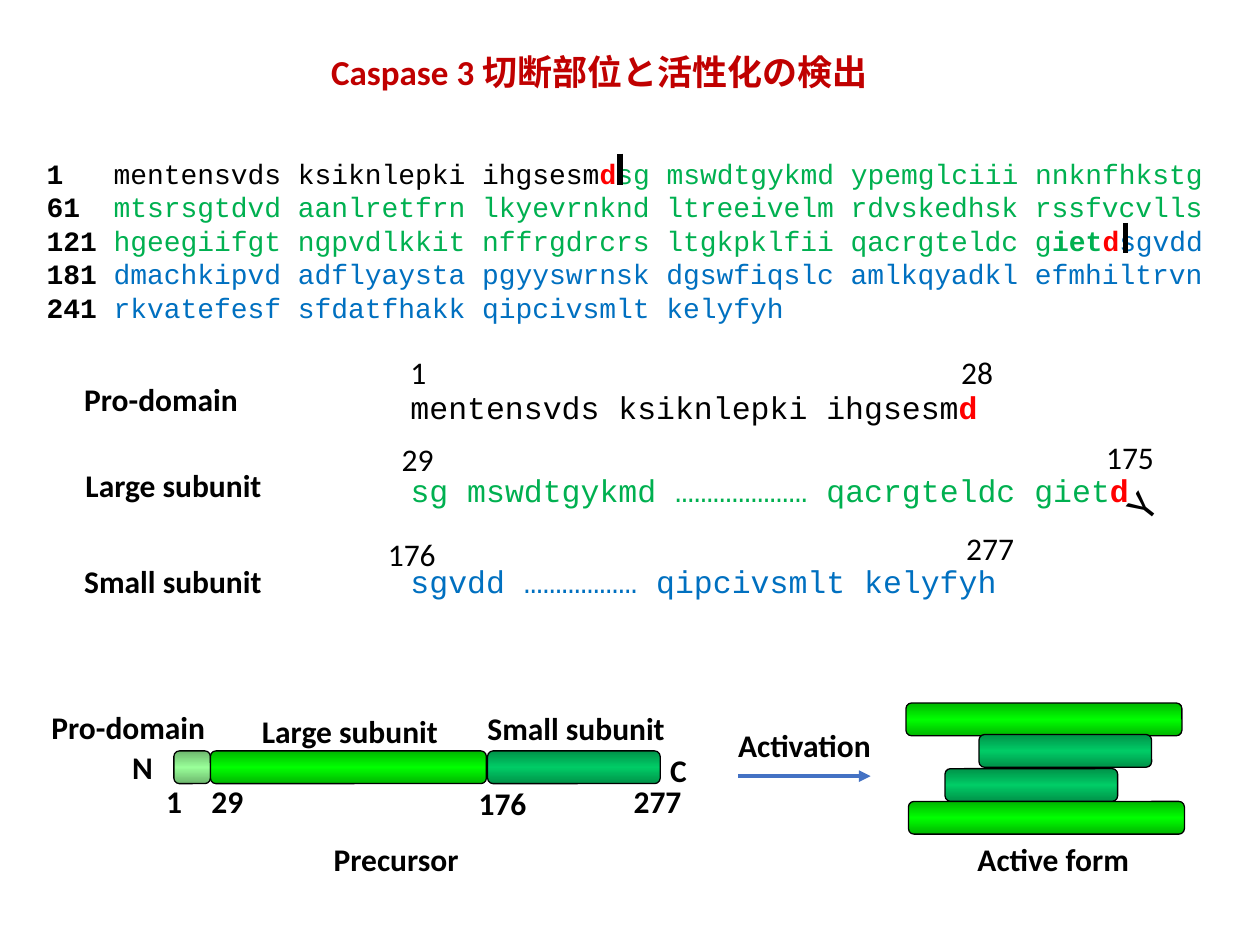
import copy

import pptx
import pptx.dml.color
import pptx.enum.shapes
import pptx.enum.text
import pptx.oxml
import pptx.oxml.ns
import pptx.util
from pptx.util import Inches

COLORS = {
    "black": "000000", "white": "FFFFFF", "title": "C00000", "cut": "FF0000",
    "large": "00B050", "small": "0070C0", "arrow": "4472C4",
}
GRADIENTS = {
    "pro": ("6DB66D", "99FF99"),
    "large": ("00B600", "00FF00"),
    "small": ("009249", "00CC66"),
}

presentation = pptx.Presentation()
presentation.slide_width = Inches(10)
presentation.slide_height = Inches(7.5)
slide = presentation.slides.add_slide(presentation.slide_layouts[6])


def rgb(value):
    return pptx.dml.color.RGBColor.from_string(value)


def add_text(text, left, top, width, height=0.4, size=18, font="Calibri",
             color="black", bold=False, wrap=False):
    box = slide.shapes.add_textbox(Inches(left), Inches(top), Inches(width), Inches(height))
    frame = box.text_frame
    frame.word_wrap = wrap
    frame.auto_size = pptx.enum.text.MSO_AUTO_SIZE.SHAPE_TO_FIT_TEXT
    paragraph = frame.paragraphs[0]
    runs = [(text, color, bold)] if isinstance(text, str) else text
    for run_text, run_color, run_bold in runs:
        run = paragraph.add_run()
        run.text = run_text
        run.font.name = font
        run.font.size = pptx.util.Pt(size)
        run.font.bold = run_bold
        run.font.color.rgb = rgb(COLORS[run_color])
    return box


sequence = add_text([
    ("1   ", "black", True),
    ("mentensvds ksiknlepki ihgsesm", "black", False),
    ("d", "cut", True),
    ("sg mswdtgykmd ypemglciii nnknfhkstg ", "large", False),
    ("61  ", "black", True),
    ("mtsrsgtdvd aanlretfrn lkyevrnknd ltreeivelm rdvskedhsk rssfvcvlls ", "large", False),
    ("121 ", "black", True),
    ("hgeegiifgt ngpvdlkkit nffrgdrcrs ltgkpklfii qacrgteldc g", "large", False),
    ("iet", "large", True),
    ("d", "cut", True),
    ("sgvdd ", "small", False),
    ("181 ", "black", True),
    ("dmachkipvd adflyaysta pgyyswrnsk dgswfiqslc amlkqyadkl efmhiltrvn ", "small", False),
    ("241 ", "black", True),
    ("rkvatefesf sfdatfhakk qipcivsmlt kelyfyh", "small", False),
], 0.37, 1.23, 9.27, 1.35, size=16, font="Courier New", wrap=True)
sequence.fill.solid()
sequence.fill.fore_color.rgb = rgb(COLORS["white"])
frame = sequence.text_frame
frame.vertical_anchor = pptx.enum.text.MSO_ANCHOR.MIDDLE
frame.margin_left = frame.margin_right = frame.margin_top = frame.margin_bottom = 0

add_text("Caspase 3 切断部位と活性化の検出", 2.53, 0.35, 4.5, 0.44,
         size=20, color="title", bold=True, wrap=True)

fragments = [
    ([("mentensvds ksiknlepki ihgsesm", "black", False), ("d", "cut", True)], 3.03, 5),
    ([("sg mswdtgykmd ………………… qacrgteldc giet", "large", False), ("d", "cut", True)], 3.69, 6.05),
    ([("sgvdd ……………… qipcivsmlt kelyfyh", "small", False)], 4.41, 5.43),
]
for runs, top, width in fragments:
    add_text(runs, 3.16, top, width, font="Courier New", wrap=True)

antibody = add_text("Y", 8.88, 3.78, 0.3, 0.5, size=24, wrap=True)
antibody.rotation = 308.2

positions = [
    ("1", 3.16, 2.75, 0.33), ("28", 7.53, 2.75, 0.46),
    ("29", 3.09, 3.44, 0.46), ("175", 8.68, 3.43, 0.59),
    ("176", 2.98, 4.2, 0.59), ("277", 7.57, 4.15, 0.59),
]
for text, left, top, width in positions:
    add_text(text, left, top, width)

bars = [
    ("pro", 1.38, 5.96, 0.29, 0), ("large", 1.67, 5.96, 2.19, 0), ("small", 3.87, 5.96, 1.37, 0),
    ("large", 7.19, 5.58, 2.19, 0), ("small", 7.77, 5.83, 1.37, 0),
    ("large", 7.21, 6.36, 2.19, 180), ("small", 7.5, 6.1, 1.37, 180),
]
for domain, left, top, width, rotation in bars:
    bar = slide.shapes.add_shape(pptx.enum.shapes.MSO_SHAPE.ROUNDED_RECTANGLE,
                                 Inches(left), Inches(top), Inches(width), Inches(0.26))
    bar.shadow.inherit = False
    bar.rotation = rotation
    bar.line.color.rgb = rgb(COLORS["black"])
    bar.line.width = pptx.util.Pt(0.75)
    bar.fill.gradient()
    bar.fill.gradient_angle = 90
    stop_list = bar._element.spPr.find(".//" + pptx.oxml.ns.qn("a:gsLst"))
    stop_list.append(copy.deepcopy(stop_list[0]))
    edge, middle = GRADIENTS[domain]
    for stop, position, value in zip(bar.fill.gradient_stops, (0, 0.5, 1), (edge, middle, edge)):
        stop.position = position
        stop.color.rgb = rgb(value)

labels = [
    ("Pro-domain", 0.57, 2.97, 1.43), ("Large subunit", 0.58, 3.65, 1.61),
    ("Small subunit", 0.57, 4.41, 1.62),
    ("Pro-domain", 0.31, 5.57, 1.43), ("Large subunit", 1.98, 5.6, 1.61),
    ("Small subunit", 3.77, 5.58, 1.62),
    ("N", 0.95, 5.89, 0.37), ("C", 5.22, 5.91, 0.34),
    ("1", 1.22, 6.16, 0.33), ("29", 1.58, 6.16, 0.46),
    ("176", 3.7, 6.17, 0.59), ("277", 4.93, 6.16, 0.59),
    ("Activation", 5.76, 5.71, 1.27), ("Precursor", 2.55, 6.62, 1.2),
    ("Active form", 7.66, 6.62, 1.46),
]
for text, left, top, width in labels:
    add_text(text, left, top, width, bold=True)

lines = [
    (4.92, 1.22, 4.92, 1.47, "black", 3, False),
    (8.93, 1.77, 8.93, 2.01, "black", 3, False),
    (5.86, 6.16, 6.91, 6.16, "arrow", 2.25, True),
]
for start_x, start_y, end_x, end_y, color, width, has_arrowhead in lines:
    connector = slide.shapes.add_connector(
        pptx.enum.shapes.MSO_CONNECTOR.STRAIGHT,
        Inches(start_x), Inches(start_y), Inches(end_x), Inches(end_y))
    connector.line.color.rgb = rgb(COLORS[color])
    connector.line.width = pptx.util.Pt(width)
    if has_arrowhead:
        arrowhead = pptx.oxml.parse_xml(
            f'<a:tailEnd {pptx.oxml.ns.nsdecls("a")} type="triangle"/>')
        connector.line._get_or_add_ln().append(arrowhead)
    connector._element.spPr.append(
        pptx.oxml.parse_xml(f'<a:effectLst {pptx.oxml.ns.nsdecls("a")}/>'))

presentation.save("out.pptx")
